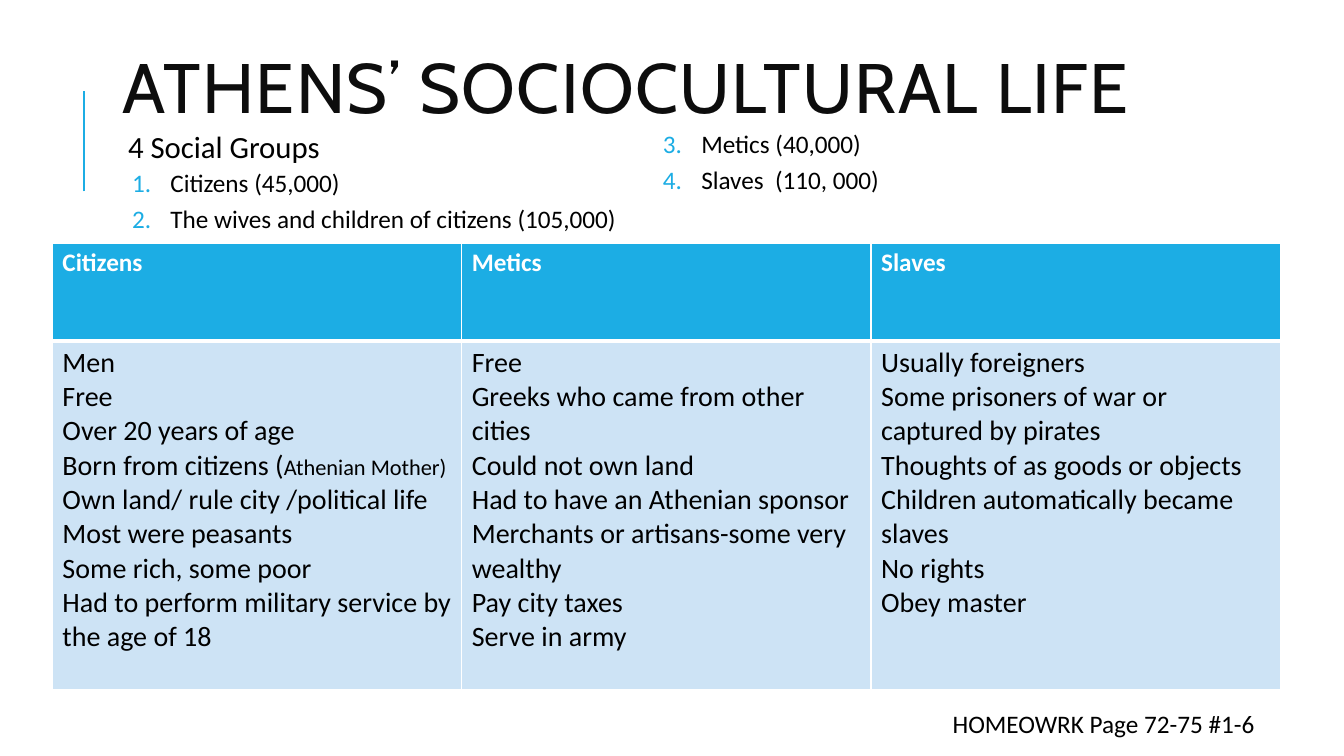
import pptx
import pptx.util
import pptx.dml.color
import pptx.enum.shapes
import pptx.enum.text
import pptx.oxml
import pptx.oxml.ns
from lxml import etree

Pt, Inches = pptx.util.Pt, pptx.util.Inches
qn = pptx.oxml.ns.qn
COLORS = {"accent": "1CADE4", "pale": "CDE3F5", "title": "0D0D0D",
          "text": "000000", "white": "FFFFFF"}
HEADING = {"name": "Cabin", "size": Pt(50), "bold": False}
INTRO = {"name": "Calibri", "size": Pt(22)}
ITEM = {"name": "Calibri", "size": Pt(18)}
HEADER = {"name": "Calibri", "size": Pt(18), "bold": True}
CELL = {"name": "Calibri", "size": Pt(20), "bold": False}
SMALL = {"name": "Calibri", "size": Pt(16), "bold": False}

prs = pptx.Presentation()
prs.slide_width, prs.slide_height = Inches(13.33), Inches(7.5)


def place(left, top, width, height):
    """Turn percentages of the slide's size into lengths."""
    w, h = prs.slide_width / 100, prs.slide_height / 100
    return int(left * w), int(top * h), int(width * w), int(height * h)


def add_run(p, text, style, color):
    r = p.add_run()
    r.text = text
    for key, value in style.items():
        setattr(r.font, key, value)
    r.font.color.rgb = pptx.dml.color.RGBColor.from_string(COLORS[color])
    return r


s = prs.slides.add_slide(prs.slide_layouts[1])
title, body = s.placeholders
boxes = [(title, (8.4, 1.47, 79.75, 21.87)), (body, (8.4, 16.8, 79.75, 18.27))]
for sp, box in boxes:
    sp.left, sp.top, sp.width, sp.height = place(*box)
    sp.text_frame.auto_size = pptx.enum.text.MSO_AUTO_SIZE.NONE

# Accent line beside the title
x, y, dx, dy = place(6.23, 12, 0, 13.33)
line = s.shapes.add_connector(pptx.enum.shapes.MSO_CONNECTOR.STRAIGHT, x, y + dy, x, y)
line.line.width = Pt(1.5)
line.line.color.rgb = pptx.dml.color.RGBColor.from_string(COLORS["accent"])
etree.SubElement(line._element.spPr, qn("a:effectLst"))

# Title
title.text_frame.vertical_anchor = pptx.enum.text.MSO_ANCHOR.MIDDLE
p = title.text_frame.paragraphs[0]
p.alignment = pptx.enum.text.PP_ALIGN.LEFT
p.line_spacing = 0.8
r = add_run(p, "ATHENS’ SOCIOCULTURAL LIFE", HEADING, "title")
r.font._element.set("spc", "100")

# Social groups in two text columns
tf = body.text_frame
for side in ("left", "top", "right", "bottom"):
    setattr(tf, "margin_" + side, Inches(0.05))
tf._txBody.bodyPr.set("numCol", "2")
p = tf.paragraphs[0]
pPr = p._p.get_or_add_pPr()
pPr.set("marL", str(Inches(0.1)))
pPr.set("indent", "0")
etree.SubElement(pPr, qn("a:buNone"))
p.line_spacing, p.space_before, p.space_after = 0.9, Pt(0), Pt(2)
add_run(p, "4 Social Groups", INTRO, "text")

groups = ["Citizens (45,000)", "The wives and children of citizens (105,000)",
          "Metics (40,000)", "Slaves  (110, 000)"]
for group in groups:
    p = tf.add_paragraph()
    p.level = 1
    pPr = p._p.get_or_add_pPr()
    pPr.set("marL", str(Inches(0.52)))
    pPr.set("indent", str(-Inches(0.38)))
    color = etree.SubElement(pPr, qn("a:buClr"))
    etree.SubElement(color, qn("a:srgbClr"), val=COLORS["accent"])
    etree.SubElement(pPr, qn("a:buFont"), typeface="Calibri")
    etree.SubElement(pPr, qn("a:buAutoNum"), type="arabicPeriod")
    p.line_spacing, p.space_before, p.space_after = 0.9, Pt(2), Pt(4)
    add_run(p, group, ITEM, "text")

# Comparison table: each cell is a list of paragraphs, each a list of runs
columns = {
    "Citizens": [
        [("Men", CELL)], [("Free", CELL)], [("Over 20 years of age", CELL)],
        [("Born from citizens (", CELL), ("Athenian Mother)", SMALL)],
        [("Own land/ rule city /political life", CELL)],
        [("Most were peasants", CELL)], [("Some rich, some poor", CELL)],
        [("Had to perform military service by the age of 18", CELL)]],
    "Metics": [
        [("Free", CELL)], [("Greeks who came from other cities", CELL)],
        [("Could not own land", CELL)], [("Had to have an Athenian sponsor", CELL)],
        [("Merchants or artisans-some very wealthy", CELL)],
        [("Pay city taxes", CELL)], [("Serve in army", CELL)]],
    "Slaves": [
        [("Usually foreigners", CELL)],
        [("Some prisoners of war or captured by pirates", CELL)],
        [("Thoughts of as goods or objects", CELL)],
        [("Children automatically became slaves", CELL)],
        [("No rights", CELL)], [("Obey master", CELL)]],
}
table = s.shapes.add_table(2, len(columns), *place(3.9, 32.13, 91.37, 59.07)).table
table.rows[0].height, table.rows[1].height = Inches(0.97), Inches(3.46)
for col, (name, facts) in enumerate(columns.items()):
    rows = [([[(name, HEADER)]], "accent", "white", {"lnB": 3}),
            (facts, "pale", "text", {"lnT": 3})]
    for row, (paragraphs, fill, ink, thick) in enumerate(rows):
        cell = table.cell(row, col)
        cell.fill.solid()
        cell.fill.fore_color.rgb = pptx.dml.color.RGBColor.from_string(COLORS[fill])
        tcPr = cell._tc.get_or_add_tcPr()
        for i, edge in enumerate(("lnL", "lnR", "lnT", "lnB")):
            ln = etree.Element(qn("a:" + edge), w=str(Pt(thick.get(edge, 1))))
            solid = etree.SubElement(ln, qn("a:solidFill"))
            etree.SubElement(solid, qn("a:srgbClr"), val=COLORS["white"])
            tcPr.insert(i, ln)
        tf = cell.text_frame
        for i, runs in enumerate(paragraphs):
            p = tf.add_paragraph() if i else tf.paragraphs[0]
            for text, style in runs:
                add_run(p, text, style, ink)

# Homework note
tf = s.shapes.add_textbox(*place(70.14, 93.07, 25.88, 5.33)).text_frame
tf.word_wrap = False
tf.auto_size = pptx.enum.text.MSO_AUTO_SIZE.SHAPE_TO_FIT_TEXT
add_run(tf.paragraphs[0], "HOMEOWRK Page 72-75 #1-6", ITEM, "text")

prs.save("out.pptx")
